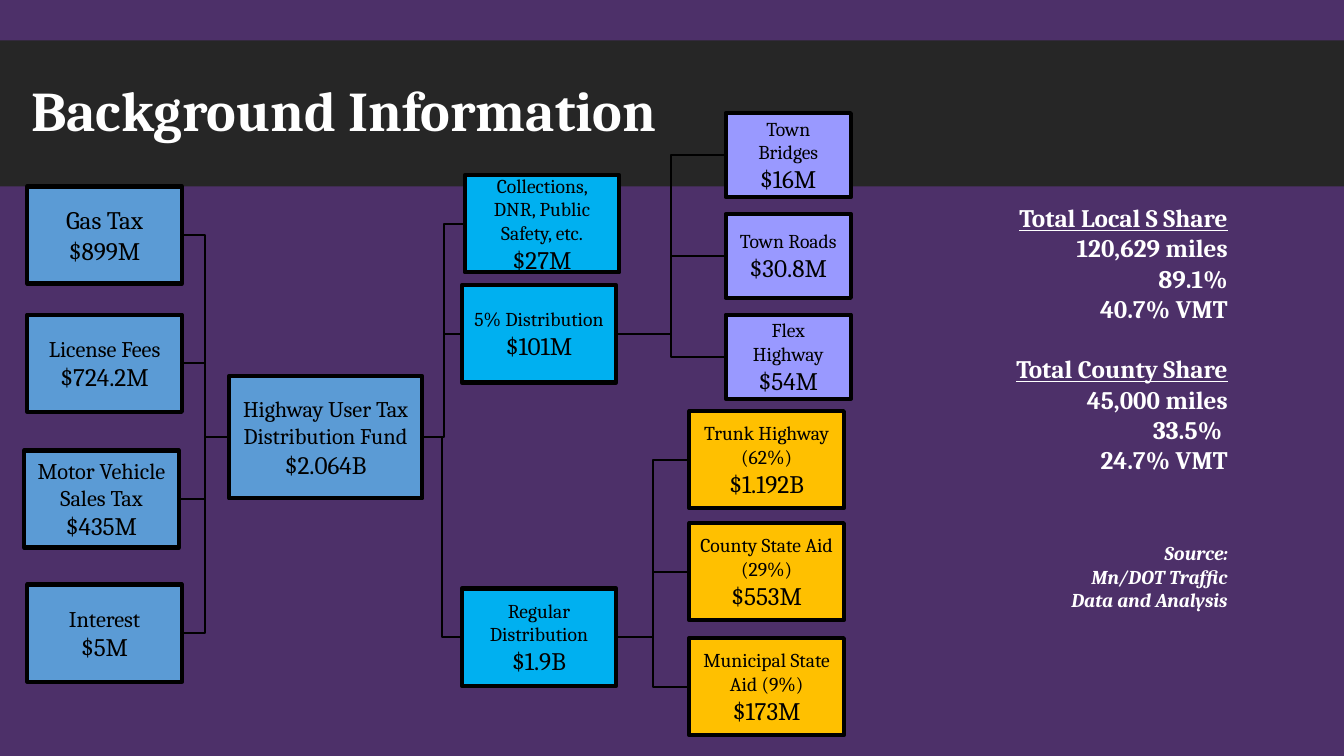
from dataclasses import dataclass

from lxml import etree
from pptx import Presentation
from pptx.dml.color import RGBColor
from pptx.enum.shapes import MSO_CONNECTOR, MSO_SHAPE
from pptx.enum.text import MSO_ANCHOR, MSO_AUTO_SIZE, PP_ALIGN
from pptx.oxml.ns import qn
from pptx.util import Pt

RECT = MSO_SHAPE.RECTANGLE
ELBOW, STRAIGHT = MSO_CONNECTOR.ELBOW, MSO_CONNECTOR.STRAIGHT
CENTER, RIGHT = PP_ALIGN.CENTER, PP_ALIGN.RIGHT
MIDDLE = MSO_ANCHOR.MIDDLE
NO_FIT = MSO_AUTO_SIZE.NONE
SIDE_LEFT, SIDE_RIGHT = 1, 3

FONT = "Cambria"
BLACK, WHITE = "000000", "FFFFFF"
PURPLE, CHARCOAL = "4D3069", "262626"
BLUE, CYAN, AMBER, LILAC = "5B9BD5", "00B0F0", "FFC000", "9999FF"
BOX_W, BOX_H = 110.4, 69.4
AMOUNT_SIZE = 18


@dataclass
class Box:
    key: str
    left: float
    top: float
    fill: str
    label: list[str]
    amount: str
    size: int = 14
    width: float = BOX_W
    height: float = BOX_H


@dataclass
class Line:
    text: str
    fmt: dict
    before: float = 0


def rgb(value: str) -> RGBColor:
    return RGBColor.from_string(value)


def write(p, text: str, align, color: str, fmt: dict) -> None:
    p.alignment = align
    r = p.add_run()
    r.text = text
    r.font.name = FONT
    r.font.color.rgb = rgb(color)
    for name, value in fmt.items():
        setattr(r.font, name, value)


def next_paragraph(tf, index: int):
    return tf.add_paragraph() if index else tf.paragraphs[0]


def add_box(slide, box: Box):
    sp = slide.shapes.add_shape(
        RECT, Pt(box.left), Pt(box.top), Pt(box.width), Pt(box.height))
    sp.shadow.inherit = False
    sp.fill.solid()
    sp.fill.fore_color.rgb = rgb(box.fill)
    sp.line.color.rgb = rgb(BLACK)
    sp.line.width = Pt(3)
    tf = sp.text_frame
    tf.word_wrap = True
    tf.vertical_anchor = MIDDLE
    rows = [(text, box.size) for text in box.label] + [(box.amount, AMOUNT_SIZE)]
    for i, (text, size) in enumerate(rows):
        write(next_paragraph(tf, i), text, CENTER, BLACK, {"size": Pt(size)})
    return sp


def style_connector(conn) -> None:
    conn.line.color.rgb = rgb(BLACK)
    conn.line.width = Pt(1.5)
    etree.SubElement(conn.element.spPr, qn("a:effectLst"))


def add_elbow(slide, source, target) -> None:
    conn = slide.shapes.add_connector(ELBOW, 0, 0, 0, 0)
    conn.begin_connect(source, SIDE_RIGHT)
    conn.end_connect(target, SIDE_LEFT)
    style_connector(conn)


def add_stub(slide, sp, side: int, trunk_x: float) -> None:
    """Join the side of a box to a vertical trunk line."""
    y = sp.top + sp.height // 2
    conn = slide.shapes.add_connector(STRAIGHT, Pt(trunk_x), y, Pt(trunk_x), y)
    conn.begin_connect(sp, side)
    style_connector(conn)


# Content
BOXES = [
    Box("gas", 19.5, 133.2, BLUE, ["Gas Tax"], "$899M", 18),
    Box("license", 19.5, 224.8, BLUE, ["License Fees"], "$724.2M", 16),
    Box("sales", 17.3, 321.8, BLUE, ["Motor Vehicle Sales Tax"], "$435M", 16),
    Box("interest", 19.5, 417.6, BLUE, ["Interest"], "$5M", 16),
    Box("fund", 163.5, 268.8, BLUE, ["Highway User Tax Distribution Fund"],
        "$2.064B", 16, 138.2, 87.2),
    Box("collections", 332, 125.2, CYAN,
        ["Collections, DNR, Public Safety, etc."], "$27M"),
    Box("five", 329.8, 203.8, CYAN, ["5% Distribution"], "$101M"),
    Box("regular", 329.8, 420.4, CYAN, ["Regular Distribution"], "$1.9B"),
    Box("trunk", 492.4, 293.7, AMBER, ["Trunk Highway (62%)"], "$1.192B"),
    Box("county", 492.4, 373.7, AMBER, ["County State Aid", "(29%)"], "$553M"),
    Box("municipal", 492.4, 455.8, AMBER, ["Municipal State Aid (9%)"], "$173M"),
]
TOWN_PROGRAMS = [("bridges", "Town Bridges", "$16M"),
                 ("roads", "Town Roads", "$30.8M"),
                 ("flex", "Flex Highway", "$54M")]
BOXES += [Box(key, 518.4, 80.8 + 72 * i, LILAC, [label], amount, 14, 89.4, 60)
          for i, (key, label, amount) in enumerate(TOWN_PROGRAMS)]

FLOWS = {
    "gas": ["fund"], "license": ["fund"], "interest": ["fund"],
    "fund": ["collections", "regular"],
    "five": ["bridges", "roads", "flex"],
    "regular": ["trunk", "county", "municipal"],
}
STUBS = [("sales", SIDE_RIGHT, 146.7), ("five", SIDE_LEFT, 316.8)]

FIGURE = {"size": Pt(18), "bold": True}
HEADING = {**FIGURE, "underline": True}
SOURCE = {"size": Pt(14), "bold": True, "italic": True}
SHARES = [
    Line("Total Local S Share", HEADING),
    Line("120,629 miles", FIGURE),
    Line("89.1%", FIGURE),
    Line("40.7% VMT", FIGURE),
    Line("Total County Share", HEADING, 21.6),
    Line("45,000 miles", FIGURE),
    Line("33.5% ", FIGURE),
    Line("24.7% VMT", FIGURE),
    Line("Source:", SOURCE, 47.5),
    Line("Mn/DOT Traffic", SOURCE),
    Line("Data and Analysis", SOURCE),
]


def main() -> None:
    prs = Presentation()
    prs.slide_width, prs.slide_height = Pt(960), Pt(540)
    slide = prs.slides.add_slide(prs.slide_layouts[5])
    slide.background.fill.solid()
    slide.background.fill.fore_color.rgb = rgb(PURPLE)

    # Title on its dark band
    title = slide.shapes.title
    title.left, title.top, title.width, title.height = (
        Pt(v) for v in (0, 28.8, 491, 104.4))
    band = slide.shapes.add_shape(RECT, 0, Pt(28.8), Pt(960), Pt(104.4))
    band.shadow.inherit = False
    band.fill.solid()
    band.fill.fore_color.rgb = rgb(CHARCOAL)
    band.line.fill.background()
    title.element.addprevious(band.element)
    tf = title.text_frame
    tf.auto_size = NO_FIT
    tf.word_wrap = True
    tf.vertical_anchor = MIDDLE
    p = tf.paragraphs[0]
    p.line_spacing = 0.9
    write(p, "Background Information", CENTER, WHITE, {"size": Pt(40), "bold": True})

    # Flow of funds
    shapes = {box.key: add_box(slide, box) for box in BOXES}
    for source, targets in FLOWS.items():
        for target in targets:
            add_elbow(slide, shapes[source], shapes[target])
    for key, side, trunk_x in STUBS:
        add_stub(slide, shapes[key], side, trunk_x)

    # Shares and source
    sp = slide.shapes.add_textbox(Pt(72.7), Pt(141.1), Pt(811.4), Pt(324.7))
    tf = sp.text_frame
    tf.word_wrap = True
    for i, line in enumerate(SHARES):
        p = next_paragraph(tf, i)
        if line.before:
            p.space_before = Pt(line.before)
        write(p, line.text, RIGHT, WHITE, line.fmt)

    prs.save("out.pptx")


if __name__ == "__main__":
    main()
